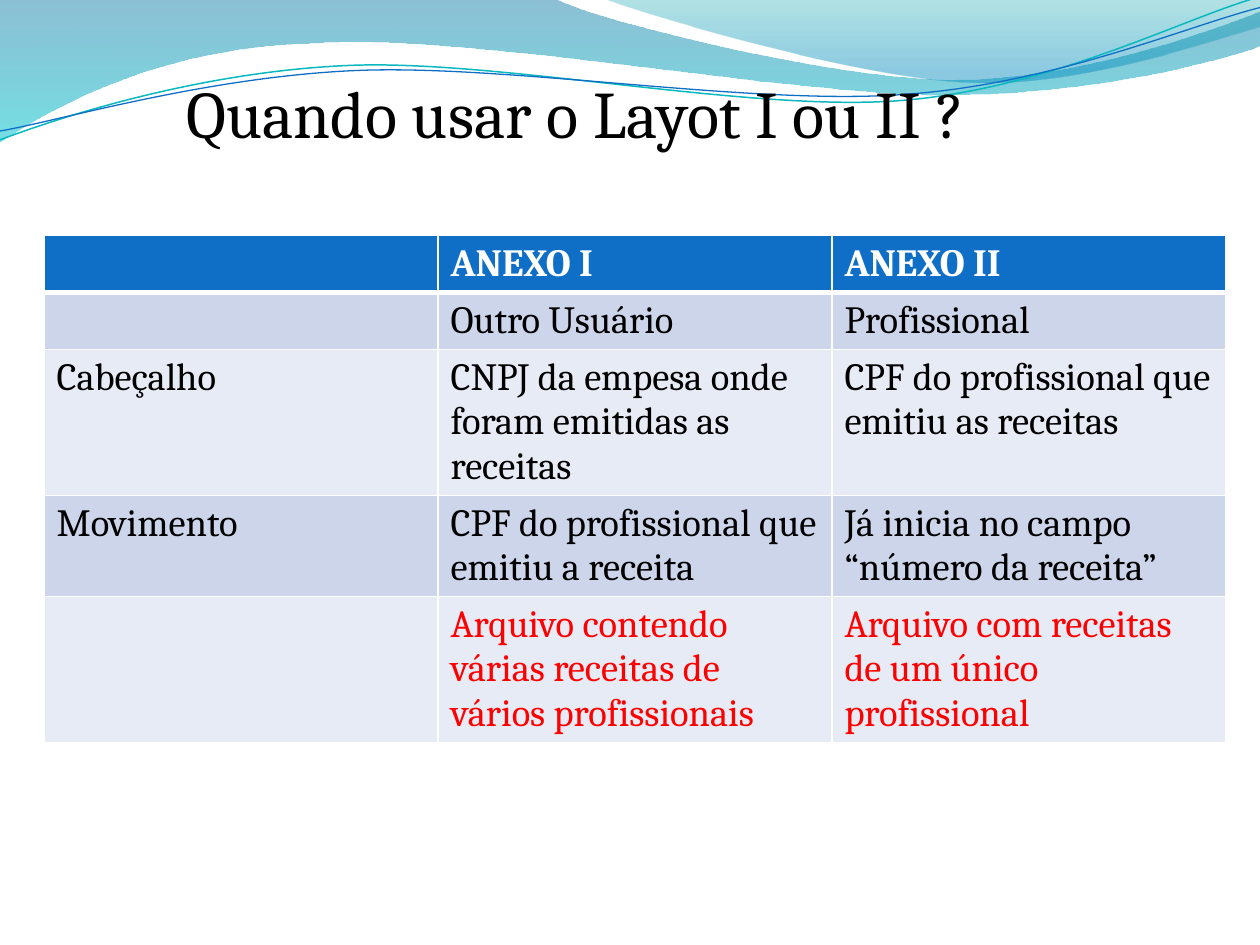
from dataclasses import dataclass

from lxml.etree import SubElement
from pptx import Presentation
from pptx.dml.color import RGBColor
from pptx.enum.text import MSO_AUTO_SIZE
from pptx.oxml.ns import qn
from pptx.util import Inches, Pt


@dataclass(frozen=True)
class Theme:
    font: str = "Cambria"
    title: int = 38
    body: int = 22
    black: str = "000000"
    white: str = "FFFFFF"
    red: str = "FF0000"
    blue: str = "0F6FC6"
    teal: str = "0AB8BF"
    bands: tuple = ("CCD5EA", "E7EBF5")
    # Gradient stops: position, colour, opacity in percent
    left: tuple = ((0, "0074A1", 45), (100, "00C6CF", 55))
    right: tuple = ((0, "00A1A9", 30), (80, "008BBF", 45))


THEME = Theme()

# A point pair is a straight step; six numbers are a Bezier step.
LEFT = [
    (0, 0), (4.4, -0.01),
    (4.76, 0.17, 6.64, 0.63, 7.58, 0.63),
    (8.53, 0.63, 9.58, 0.26, 10, 0.09),
    (10.01, 0.36),
    (9.83, 0.44, 8.7, 0.76, 7.46, 0.75),
    (6.22, 0.75, 3.82, 0.28, 2.57, 0.34),
    (1.29, 0.36, 0.46, 0.83, -0.01, 1.13),
    (0, 0),
]
RIGHT = [
    (4.79, -0.01),
    (5.09, 0.11, 6.82, 0.62, 7.69, 0.65),
    (8.56, 0.69, 9.61, 0.32, 10, 0.21),
    (10, 0), (4.79, -0.01),
]
UPPER = [
    (0, 1.11),
    (0.48, 0.93, 1.58, 0.57, 2.77, 0.52),
    (3.95, 0.47, 5.93, 0.89, 7.13, 0.8),
    (8.33, 0.71, 9.38, 0.15, 9.98, -0.02),
]
LOWER = [
    (0, 1.04),
    (0.47, 0.96, 1.64, 0.61, 2.83, 0.56),
    (4.03, 0.51, 5.97, 0.84, 7.17, 0.75),
    (8.36, 0.67, 9.41, 0.21, 10, 0.06),
]

ROWS = [
    ("", "ANEXO I", "ANEXO II"),
    ("", "Outro Usuário", "Profissional"),
    ("Cabeçalho", "CNPJ da empesa onde foram emitidas as receitas",
     "CPF do profissional que emitiu as receitas"),
    ("Movimento", "CPF do profissional que emitiu a receita",
     "Já inicia no campo “número da receita”"),
    ("", "Arquivo contendo várias receitas de vários profissionais",
     "Arquivo com receitas de um único profissional"),
]


def style(font, size, color, bold=False):
    values = {"name": THEME.font, "size": Pt(size), "bold": bold}
    for name, value in values.items():
        setattr(font, name, value)
    font.color.rgb = RGBColor.from_string(color)


def bend(shape, steps):
    """Join the three straight parts of each Bezier step into one curve."""
    parts = shape.element.spPr.iter(qn("a:lnTo"))
    lines = iter(list(parts))
    for step in steps[1:]:
        first = next(lines)
        if len(step) == 2:
            continue
        first.tag = qn("a:cubicBezTo")
        for _ in range(2):
            extra = next(lines)
            first.append(extra[0])
            extra.getparent().remove(extra)


def add_path(slide, steps, close):
    points = [(Inches(step[i]), Inches(step[i + 1]))
              for step in steps for i in range(0, len(step), 2)]
    form = slide.shapes.build_freeform(*points[0])
    form.add_line_segments(points[1:], close=close)
    shape = form.convert_to_shape()
    bend(shape, steps)
    shape.shadow.inherit = False
    return shape


def add_wave(slide, steps, stops):
    shape = add_path(slide, steps, True)
    shape.line.fill.background()
    fill = shape.fill
    fill.gradient()
    fill.gradient_angle = 270
    for stop, (place, color, _) in zip(fill.gradient_stops, stops):
        stop.position = place / 100
        stop.color.rgb = RGBColor.from_string(color)
    marks = shape.element.spPr.iter(qn("a:srgbClr"))
    for mark, (_, _, alpha) in zip(marks, stops):
        SubElement(mark, qn("a:alpha"), val=str(alpha * 1000))


def add_curve(slide, steps, color, width):
    shape = add_path(slide, steps, False)
    shape.fill.background()
    shape.line.color.rgb = RGBColor.from_string(color)
    shape.line.width = Pt(width)


def add_title(slide, text):
    box = slide.shapes.add_textbox(
        Inches(1.38), Inches(0.52), Inches(7.24), Inches(0.74))
    frame = box.text_frame
    frame.word_wrap = True
    frame.auto_size = MSO_AUTO_SIZE.SHAPE_TO_FIT_TEXT
    run = frame.paragraphs[0].add_run()
    run.text = text
    style(run.font, THEME.title, THEME.black)


def set_edges(cell, widths):
    props = cell._tc.get_or_add_tcPr()
    for side, width in widths.items():
        edge = SubElement(props, qn(f"a:ln{side}"), w=str(Pt(width)))
        fill = SubElement(edge, qn("a:solidFill"))
        SubElement(fill, qn("a:srgbClr"), val=THEME.white)


def fill_cell(cell, text, row):
    head = row == 0
    thick = {"L": 1, "R": 1, "T": 3 if row == 1 else 1, "B": 3 if head else 1}
    set_edges(cell, thick)
    cell.fill.solid()
    back = THEME.blue if head else THEME.bands[(row - 1) % 2]
    cell.fill.fore_color.rgb = RGBColor.from_string(back)
    if head:
        color = THEME.white
    else:
        color = THEME.red if row == len(ROWS) - 1 else THEME.black
    if text:
        run = cell.text_frame.paragraphs[0].add_run()
        run.text = text
        style(run.font, THEME.body, color, head)


def add_grid(slide):
    high = Inches(0.41)
    table = slide.shapes.add_table(
        len(ROWS), len(ROWS[0]), Inches(0.35), Inches(1.87),
        Inches(9.38), high * len(ROWS)).table
    for r, texts in enumerate(ROWS):
        table.rows[r].height = high
        for c, text in enumerate(texts):
            fill_cell(table.cell(r, c), text, r)


def main():
    deck = Presentation()
    deck.slide_width, deck.slide_height = Inches(10), Inches(7.5)
    slide = deck.slides.add_slide(deck.slide_layouts[6])
    add_wave(slide, LEFT, THEME.left)
    add_wave(slide, RIGHT, THEME.right)
    add_curve(slide, UPPER, THEME.teal, 0.85)
    add_curve(slide, LOWER, THEME.blue, 0.75)
    add_grid(slide)
    add_title(slide, "Quando usar o Layot I ou II ?")
    deck.save("out.pptx")


if __name__ == "__main__":
    main()
